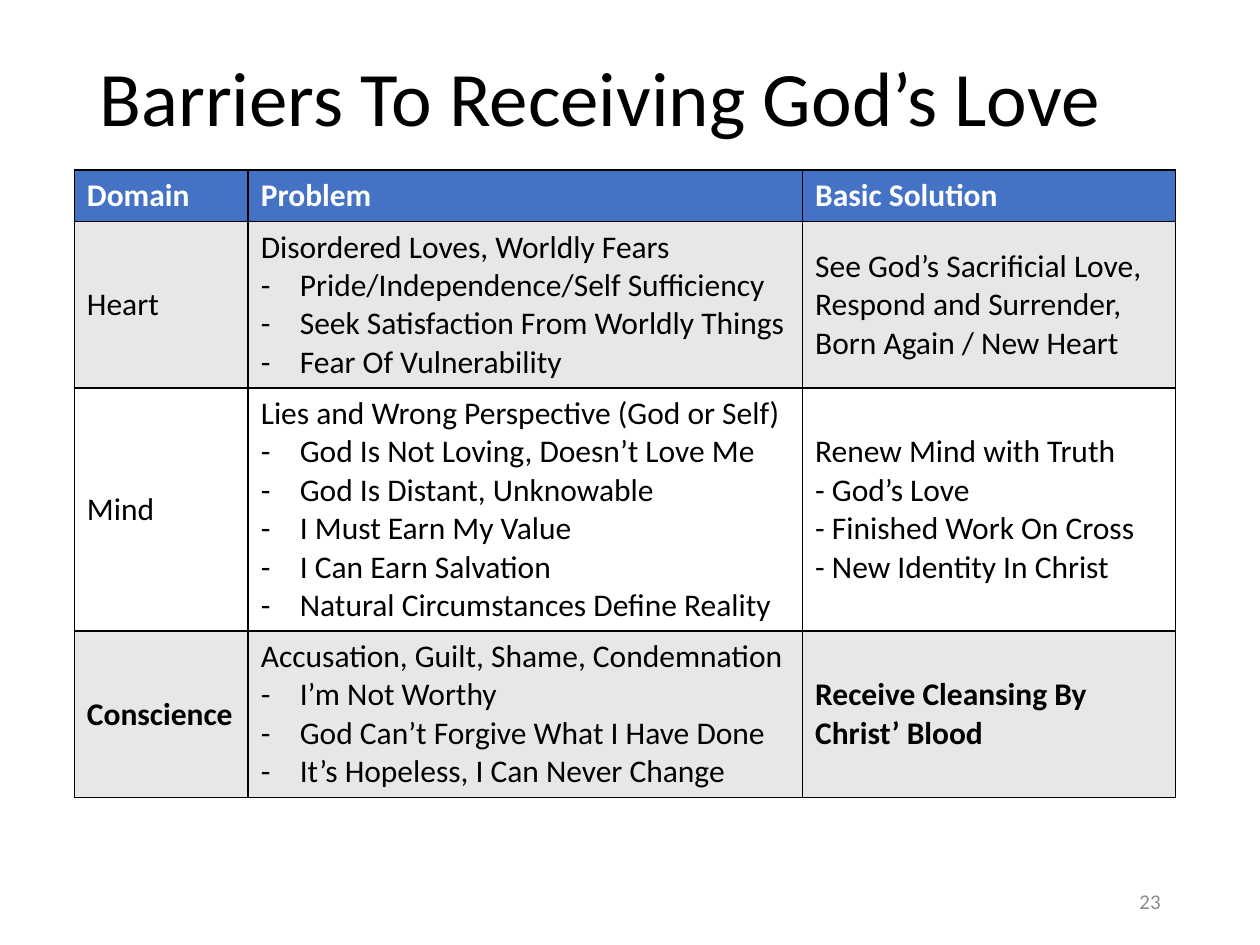
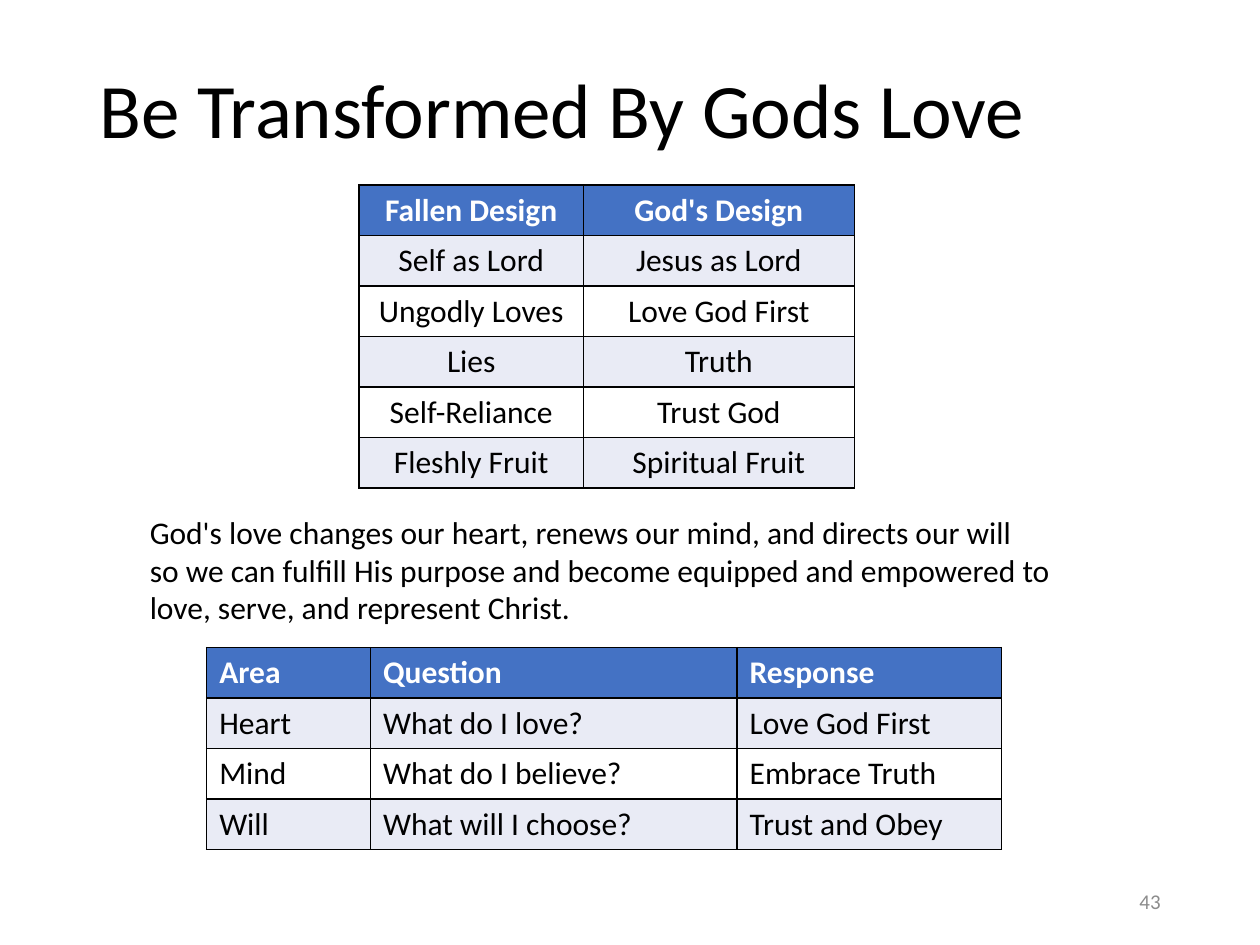
from lxml.etree import SubElement
from pptx import Presentation
from pptx.dml.color import RGBColor
from pptx.enum.text import MSO_ANCHOR, MSO_AUTO_SIZE, PP_ALIGN
from pptx.oxml.ns import qn
from pptx.util import Inches, Pt

FONT = "Calibri"
COLORS = {
    "text": "000000",
    "header_text": "FFFFFF",
    "header": "4472C4",
    "gray_band": "E7E7E7",
    "blue_band": "E9EBF5",
    "plain_band": "FFFFFF",
    "border": "000000",
    "page_number": "8C8C8C",
}
ROW_HEIGHT = 0.4
BULLET_INDENT = 0.31

# A cell is plain text, or a tuple of a lead line and its dashed points.
BARRIERS = [
    ("Domain", "Problem", "Basic Solution"),
    ("Heart",
     ("Disordered Loves, Worldly Fears",
      "Pride/Independence/Self Sufficiency",
      "Seek Satisfaction From Worldly Things",
      "Fear Of Vulnerability"),
     "See God’s Sacrificial Love,\nRespond and Surrender,\nBorn Again / New Heart"),
    ("Mind",
     ("Lies and Wrong Perspective (God or Self)",
      "God Is Not Loving, Doesn’t Love Me",
      "God Is Distant, Unknowable",
      "I Must Earn My Value",
      "I Can Earn Salvation",
      "Natural Circumstances Define Reality"),
     "Renew Mind with Truth\n- God’s Love\n- Finished Work On Cross\n"
     "- New Identity In Christ"),
    ("Conscience",
     ("Accusation, Guilt, Shame, Condemnation",
      "I’m Not Worthy",
      "God Can’t Forgive What I Have Done",
      "It’s Hopeless, I Can Never Change"),
     "Receive Cleansing By Christ’ Blood"),
]
DESIGNS = [
    ("Fallen Design", "God's Design"),
    ("Self as Lord", "Jesus as Lord"),
    ("Ungodly Loves", "Love God First"),
    ("Lies", "Truth"),
    ("Self-Reliance", "Trust God"),
    ("Fleshly Fruit", "Spiritual Fruit"),
]
RESPONSES = [
    ("Area", "Question", "Response"),
    ("Heart", "What do I love?", "Love God First"),
    ("Mind", "What do I believe?", "Embrace Truth"),
    ("Will", "What will I choose?", "Trust and Obey"),
]
SUMMARY = (
    "God's love changes our heart, renews our mind, and directs our will\n"
    "so we can fulfill His purpose and become equipped and empowered to "
    "love, serve, and represent Christ."
)


def style_paragraph(paragraph, size=18, color="text", bold=False,
                    align=PP_ALIGN.LEFT):
    paragraph.alignment = align
    font = paragraph.font
    font.name = FONT
    font.size = Pt(size)
    font.bold = bold
    font.color.rgb = RGBColor.from_string(COLORS[color])


def add_dash(paragraph):
    properties = paragraph._p.get_or_add_pPr()
    properties.set("marL", str(Inches(BULLET_INDENT)))
    properties.set("indent", str(-Inches(BULLET_INDENT)))
    SubElement(properties, qn("a:buFont"), typeface=FONT)
    SubElement(properties, qn("a:buChar"), char="-")


def add_borders(cell):
    properties = cell._tc.get_or_add_tcPr()
    for side in ("lnL", "lnR", "lnT", "lnB"):
        line = SubElement(properties, qn(f"a:{side}"), w=str(Pt(1)))
        fill = SubElement(line, qn("a:solidFill"))
        SubElement(fill, qn("a:srgbClr"), val=COLORS["border"])


def fill_cell(cell, content, band, color, bold, align):
    has_points = isinstance(content, tuple)
    cell.text = "\n".join(content) if has_points else content
    cell.vertical_anchor = MSO_ANCHOR.MIDDLE
    add_borders(cell)
    cell.fill.solid()
    cell.fill.fore_color.rgb = RGBColor.from_string(COLORS[band])
    for index, paragraph in enumerate(cell.text_frame.paragraphs):
        if has_points and index > 0:
            add_dash(paragraph)
        style_paragraph(paragraph, color=color, bold=bold, align=align)


def add_banded_table(slide, left, top, widths, rows, band="blue_band",
                     heights=None, align=PP_ALIGN.LEFT, bold_cells=()):
    heights = heights or [ROW_HEIGHT] * len(rows)
    table = slide.shapes.add_table(
        len(rows), len(widths), Inches(left), Inches(top),
        Inches(sum(widths)), Inches(sum(heights))).table
    for column, width in zip(table.columns, widths):
        column.width = Inches(width)
    for r, (contents, height) in enumerate(zip(rows, heights)):
        table.rows[r].height = Inches(height)
        if r == 0:
            row_band, color = "header", "header_text"
        else:
            row_band, color = (band if r % 2 else "plain_band"), "text"
        for c, content in enumerate(contents):
            bold = r == 0 or (r, c) in bold_cells
            fill_cell(table.cell(r, c), content, row_band, color, bold, align)


def add_text(slide, left, top, width, height, text, anchor=MSO_ANCHOR.TOP,
             **style):
    frame = slide.shapes.add_textbox(
        Inches(left), Inches(top), Inches(width), Inches(height)).text_frame
    frame.word_wrap = True
    frame.vertical_anchor = anchor
    frame.text = text
    for paragraph in frame.paragraphs:
        style_paragraph(paragraph, **style)


def add_titled_slide(deck, heading, title_height, page):
    """Add a slide with the shared title style and page number."""
    slide = deck.slides.add_slide(deck.slide_layouts.get_by_name("Title Only"))
    title = slide.shapes.title
    title.left, title.top = Inches(0.69), Inches(0.4)
    title.width, title.height = Inches(8.62), Inches(title_height)
    title.text = heading
    frame = title.text_frame
    frame.auto_size = MSO_AUTO_SIZE.NONE
    frame.vertical_anchor = MSO_ANCHOR.MIDDLE
    frame.paragraphs[0].line_spacing = 0.9
    style_paragraph(frame.paragraphs[0], size=44)
    add_text(slide, 7.06, 6.95, 2.25, 0.4, str(page), MSO_ANCHOR.MIDDLE,
             size=12, color="page_number", align=PP_ALIGN.RIGHT)
    return slide


def main():
    deck = Presentation()
    deck.slide_width, deck.slide_height = Inches(10), Inches(7.5)

    barriers = add_titled_slide(deck, "Barriers To Receiving God’s Love", 0.81, 23)
    add_banded_table(barriers, 0.59, 1.35, [1.38, 4.4, 2.96], BARRIERS,
                     band="gray_band", heights=[0.41, 1.32, 1.93, 1.32],
                     bold_cells={(3, 0), (3, 2)})

    transformed = add_titled_slide(deck, "Be Transformed By Gods Love", 1, 43)
    add_banded_table(transformed, 1.64, 5.14, [1.3, 2.91, 2.1], RESPONSES)
    add_text(transformed, 1.09, 4.02, 7.42, 1.01, SUMMARY)
    add_banded_table(transformed, 2.85, 1.47, [1.78, 2.15], DESIGNS,
                     align=PP_ALIGN.CENTER)

    deck.save("out.pptx")


if __name__ == "__main__":
    main()
